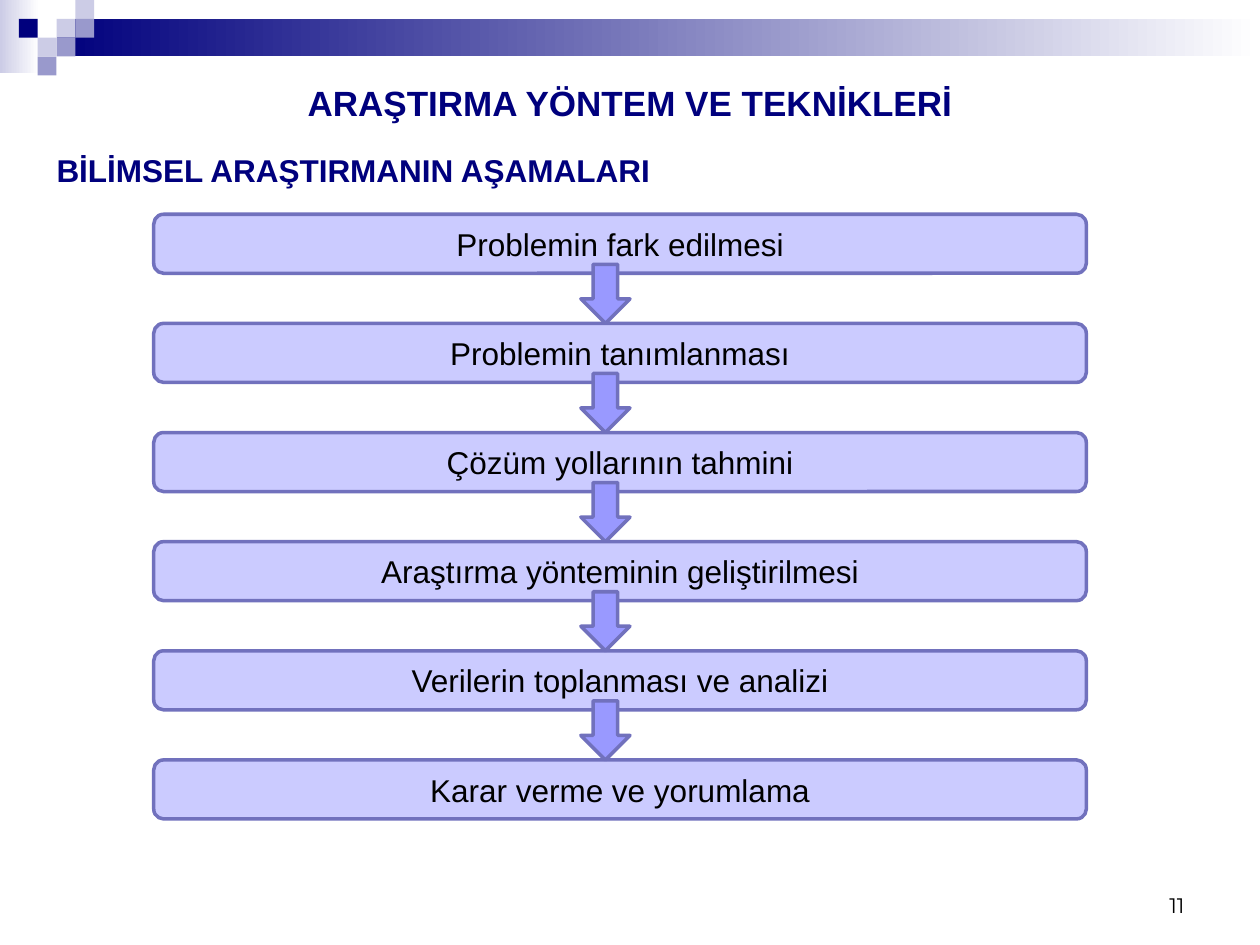
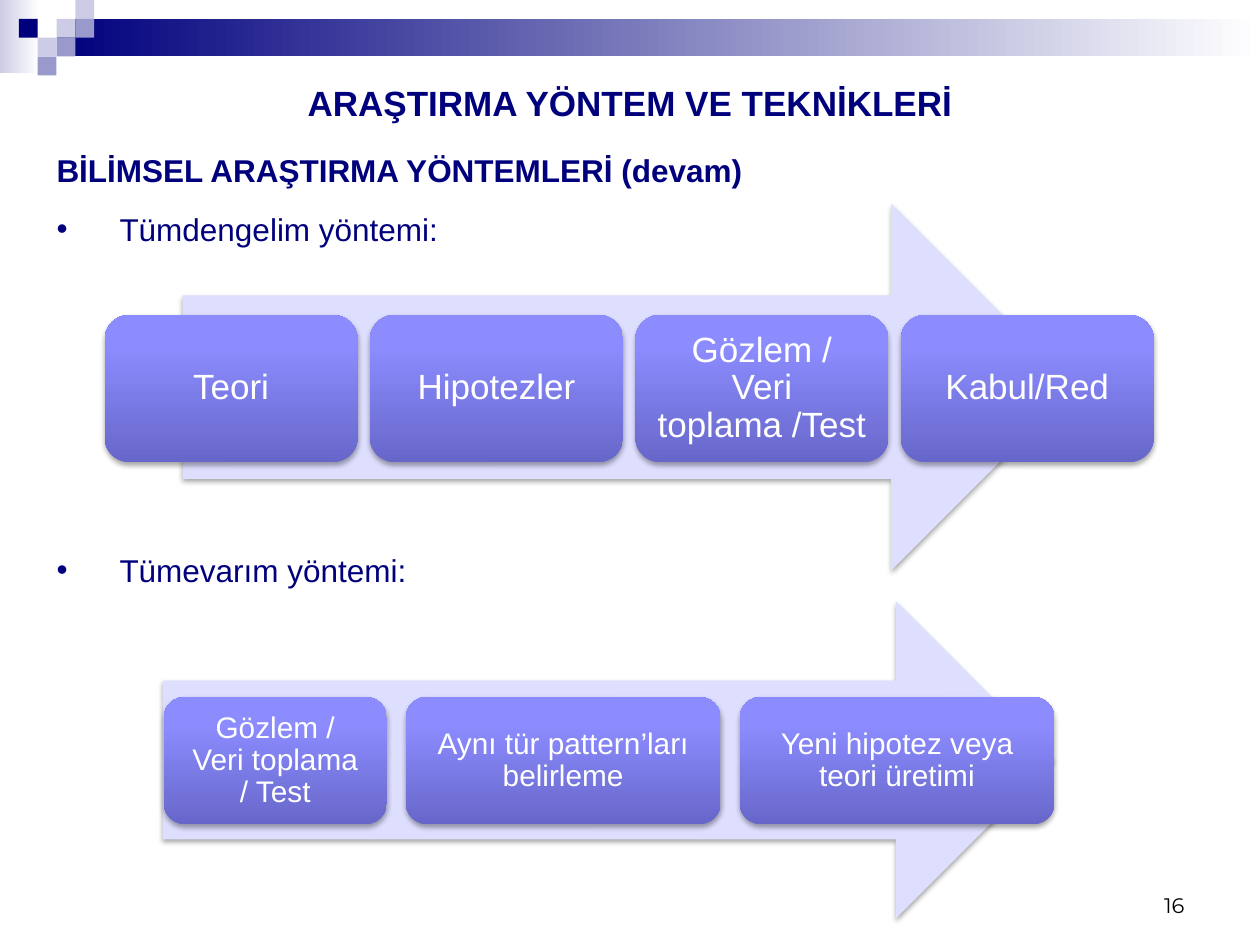
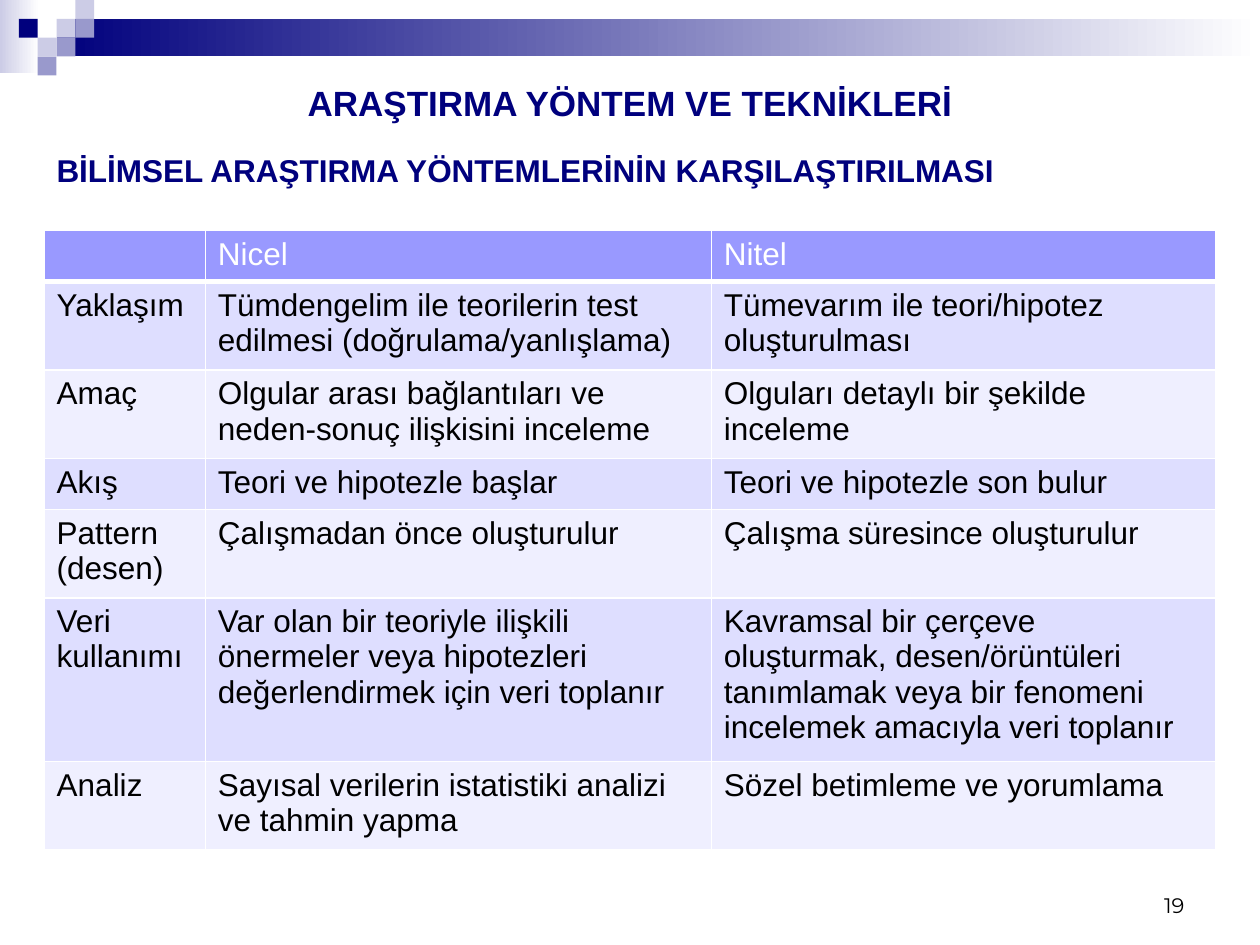
from lxml.etree import SubElement, Element
from pptx import Presentation
from pptx.dml.color import RGBColor
from pptx.enum.shapes import MSO_SHAPE
from pptx.enum.text import MSO_ANCHOR, PP_ALIGN
from pptx.oxml.ns import qn
from pptx.util import Cm, Pt

COLORS = {
    "navy": "00007D", "slate": "9999CC", "mist": "CCCCE6", "white": "FFFFFF",
    "black": "000000", "violet": "9999FF", "outline": "7171BD",
    "pale": "DEDEFF", "paler": "EFEFFF",
    "deep": "6767CA", "bright": "8C8CFF", "top": "8E8EFF",
}
TITLE = "ARAŞTIRMA YÖNTEM VE TEKNİKLERİ"

# Column, row and colour of each small square in the corner
SQUARE = 0.38
SQUARES = [(3, 1, "mist"), (4, 0, "mist"), (4, 1, "slate"), (2, 2, "mist"),
           (1, 1, "navy"), (3, 2, "slate"), (2, 3, "slate")]
CARD_GRADIENT = [(0, "deep"), (80, "bright"), (100, "top")]

STEPS = [
    "Problemin fark edilmesi",
    "Problemin tanımlanması",
    "Çözüm yollarının tahmini",
    "Araştırma yönteminin geliştirilmesi",
    "Verilerin toplanması ve analizi",
    "Karar verme ve yorumlama",
]

METHODS = ["Tümdengelim yöntemi:", "Tümevarım yöntemi:"]
CHAINS = [
    {"arrow": (3.68, 4.11, 17.98, 7.39), "left": 2.11, "top": 6.35,
     "height": 2.97, "gap": 0.25, "size": 20,
     "cards": [("Teori", 5.1), ("Hipotezler", 5.1),
               ("Gözlem /\vVeri\vtoplama /Test", 5.1), ("Kabul/Red", 5.1)]},
    {"arrow": (3.28, 12.12, 17.98, 6.4), "left": 3.3, "top": 14.05,
     "height": 2.57, "gap": 0.38, "size": 17,
     "cards": [("Gözlem /\vVeri toplama\v/ Test", 4.5),
               ("Aynı tür pattern’ları belirleme", 6.35),
               ("Yeni hipotez veya teori üretimi", 6.35)]},
]

COLUMN_WIDTHS = [3.25, 10.2, 10.16]
ROW_HEIGHTS = [1.03, 1.78, 1.78, 1.03, 1.78, 3.3, 1.78]
COMPARISON = [
    ("", "Nicel", "Nitel"),
    ("Yaklaşım",
     "Tümdengelim ile teorilerin test edilmesi (doğrulama/yanlışlama)",
     "Tümevarım ile teori/hipotez oluşturulması"),
    ("Amaç",
     "Olgular arası bağlantıları ve neden-sonuç ilişkisini inceleme",
     "Olguları detaylı bir şekilde inceleme"),
    ("Akış", "Teori ve hipotezle başlar", "Teori ve hipotezle son bulur"),
    ("Pattern (desen)", "Çalışmadan önce oluşturulur",
     "Çalışma süresince oluşturulur"),
    ("Veri kullanımı",
     "Var olan bir teoriyle ilişkili önermeler veya hipotezleri "
     "değerlendirmek için veri toplanır",
     "Kavramsal bir çerçeve oluşturmak, desen/örüntüleri tanımlamak veya "
     "bir fenomeni incelemek amacıyla veri toplanır"),
    ("Analiz", "Sayısal verilerin istatistiki analizi ve tahmin yapma",
     "Sözel betimleme ve yorumlama"),
]


def rgb(name):
    return RGBColor.from_string(COLORS[name])


def write(tf, text, size=18, color="black", bold=False, font="Arial",
          align=PP_ALIGN.LEFT, anchor=MSO_ANCHOR.TOP, spacing=None, inset=None):
    tf.text = text
    tf.word_wrap = True
    tf.vertical_anchor = anchor
    if inset is not None:
        tf.margin_left = tf.margin_right = Cm(inset)
        tf.margin_top = tf.margin_bottom = Cm(inset)
    for p in tf.paragraphs:
        p.alignment = align
        p.line_spacing = spacing
        for r in p.runs:
            r.font.name = font
            r.font.size = Pt(size)
            r.font.bold = bold
            r.font.color.rgb = rgb(color)


def add_text(s, box, text, **fmt):
    tf = s.shapes.add_textbox(*map(Cm, box)).text_frame
    write(tf, text, **fmt)
    return tf


def fill_gradient(sp, stops, angle=0):
    sp.fill.background()
    grad = Element(qn("a:gradFill"), rotWithShape="1")
    stop_list = SubElement(grad, qn("a:gsLst"))
    for pos, color in stops:
        gs = SubElement(stop_list, qn("a:gs"), pos=str(pos * 1000))
        SubElement(gs, qn("a:srgbClr"), val=COLORS[color])
    SubElement(grad, qn("a:lin"), ang=str(angle * 60000), scaled="0")
    spPr = sp._element.spPr
    spPr.replace(spPr.find(qn("a:noFill")), grad)


def add_shadow(sp):
    effects = sp._element.spPr.find(qn("a:effectLst"))
    shadow = SubElement(effects, qn("a:outerShdw"), blurRad=str(Pt(3.1)),
                        dist=str(Pt(1.8)), dir="5400000", rotWithShape="0")
    color = SubElement(shadow, qn("a:srgbClr"), val=COLORS["black"])
    SubElement(color, qn("a:alpha"), val="35000")


def add_box(s, kind, box, fill, line=None, alpha=None, angle=0, shadow=False):
    """Add a preset shape; fill is a colour name or a list of gradient stops."""
    sp = s.shapes.add_shape(kind, *map(Cm, box))
    sp.shadow.inherit = False
    if isinstance(fill, str):
        sp.fill.solid()
        sp.fill.fore_color.rgb = rgb(fill)
        if alpha:
            color = sp._element.spPr.find(".//" + qn("a:srgbClr"))
            SubElement(color, qn("a:alpha"), val=str(alpha * 1000))
    else:
        fill_gradient(sp, fill, angle)
    if line:
        sp.line.color.rgb = rgb(line)
        sp.line.width = Pt(2)
    else:
        sp.line.fill.background()
    if shadow:
        add_shadow(sp)
    return sp


def new_slide(prs, heading, number):
    s = prs.slides.add_slide(prs.slide_layouts[6])
    rect = MSO_SHAPE.RECTANGLE
    add_box(s, rect, (0, 0, 0.79, 1.47), [(0, "mist"), (100, "white")])
    add_box(s, rect, (1.14, 0.38, 24.26, 0.76), [(0, "navy"), (100, "white")])
    for col, row, color in SQUARES:
        add_box(s, rect, (col * SQUARE, row * SQUARE, SQUARE, SQUARE), color)
    add_text(s, (0, 1.52, 25.4, 1.09), TITLE, size=20, color="navy", bold=True,
             align=PP_ALIGN.CENTER)
    add_text(s, (0.89, 2.92, 23.6, 1.02), heading, color="navy", bold=True)
    add_text(s, (18.21, 17.35, 5.92, 1.27), str(number), size=12,
             font="Montserrat", align=PP_ALIGN.RIGHT, anchor=MSO_ANCHOR.BOTTOM)
    return s


def add_steps(s):
    left, top, width, height, pitch = 3.1, 4.32, 18.8, 1.19, 2.2
    tops = [top + i * pitch for i in range(len(STEPS))]
    for y, step in zip(tops, STEPS):
        sp = add_box(s, MSO_SHAPE.ROUNDED_RECTANGLE, (left, y, width, height),
                     "violet", line="outline", alpha=50)
        write(sp.text_frame, step, align=PP_ALIGN.CENTER,
              anchor=MSO_ANCHOR.MIDDLE)
    for y in tops[1:]:
        add_box(s, MSO_SHAPE.DOWN_ARROW, (11.71, y - height, 0.99, height),
                "violet", line="outline")


def add_chain(s, chain):
    add_box(s, MSO_SHAPE.RIGHT_ARROW, chain["arrow"], "pale", shadow=True)
    x = chain["left"]
    for text, width in chain["cards"]:
        sp = add_box(s, MSO_SHAPE.ROUNDED_RECTANGLE,
                     (x, chain["top"], width, chain["height"]),
                     CARD_GRADIENT, angle=270, shadow=True)
        write(sp.text_frame, text, size=chain["size"], color="white",
              align=PP_ALIGN.CENTER, anchor=MSO_ANCHOR.MIDDLE, spacing=0.9,
              inset=0.19)
        x += width + chain["gap"]


def add_methods(s):
    tf = add_text(s, (0.89, 4.11, 23.6, 7.95), "\n".join(METHODS), color="navy")
    for p in tf.paragraphs:
        pPr = p._p.get_or_add_pPr()
        pPr.set("marL", str(Cm(1.27)))
        pPr.set("indent", str(-Cm(1.27)))
        SubElement(pPr, qn("a:buFont"), typeface="Arial")
        SubElement(pPr, qn("a:buChar"), char="•")
    tf.paragraphs[1].space_before = Pt(173)


def set_borders(cell, bottom):
    tcPr = cell._tc.get_or_add_tcPr()
    for side, width in (("L", 1), ("R", 1), ("T", 1), ("B", bottom)):
        ln = SubElement(tcPr, qn("a:ln" + side), w=str(Pt(width)))
        fill = SubElement(ln, qn("a:solidFill"))
        SubElement(fill, qn("a:srgbClr"), val=COLORS["white"])


def add_comparison(s):
    frame = s.shapes.add_table(
        len(COMPARISON), len(COLUMN_WIDTHS), Cm(0.89), Cm(4.65),
        Cm(sum(COLUMN_WIDTHS)), Cm(sum(ROW_HEIGHTS)))
    table = frame.table
    table.first_row = table.horz_banding = False
    for column, width in zip(table.columns, COLUMN_WIDTHS):
        column.width = Cm(width)
    for i, (row, height) in enumerate(zip(table.rows, ROW_HEIGHTS)):
        row.height = Cm(height)
        header = i == 0
        fill = "violet" if header else ("paler", "pale")[i % 2]
        for cell, text in zip(row.cells, COMPARISON[i]):
            set_borders(cell, bottom=3 if header else 1)
            cell.fill.solid()
            cell.fill.fore_color.rgb = rgb(fill)
            write(cell.text_frame, text, color="white" if header else "black")


def main():
    prs = Presentation()
    prs.slide_width, prs.slide_height = Cm(25.4), Cm(19.05)

    add_steps(new_slide(prs, "BİLİMSEL ARAŞTIRMANIN AŞAMALARI", 11))

    s = new_slide(prs, "BİLİMSEL ARAŞTIRMA YÖNTEMLERİ (devam)", 16)
    for chain in CHAINS:
        add_chain(s, chain)
    add_methods(s)

    add_comparison(new_slide(
        prs, "BİLİMSEL ARAŞTIRMA YÖNTEMLERİNİN KARŞILAŞTIRILMASI", 19))

    prs.save("out.pptx")


if __name__ == "__main__":
    main()
